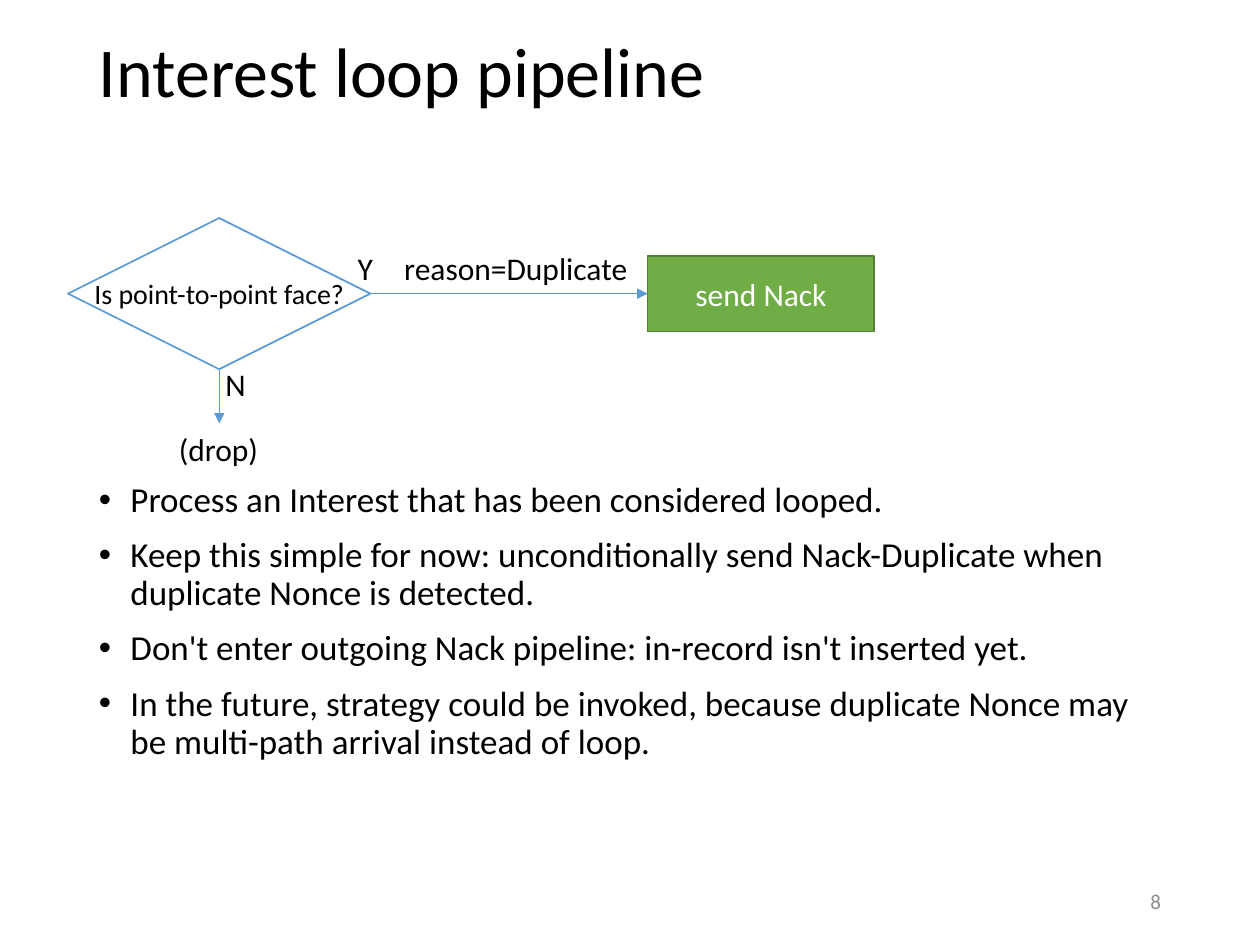
"""Build the Interest loop pipeline slide with its flowchart and notes on behaviour."""
from dataclasses import dataclass
from typing import Optional

import pptx
import pptx.dml.color
import pptx.enum.shapes
import pptx.enum.text
import pptx.oxml.ns
import pptx.util

Pt = pptx.util.Pt
RGBColor = pptx.dml.color.RGBColor
MSO_SHAPE = pptx.enum.shapes.MSO_SHAPE
ANCHOR = pptx.enum.text.MSO_ANCHOR
ALIGN = pptx.enum.text.PP_ALIGN
AUTO_SIZE = pptx.enum.text.MSO_AUTO_SIZE
qn = pptx.oxml.ns.qn

BLACK = RGBColor(0x00, 0x00, 0x00)
WHITE = RGBColor(0xFF, 0xFF, 0xFF)
GRAY = RGBColor(0x8C, 0x8C, 0x8C)
BLUE = RGBColor(0x5B, 0x9B, 0xD5)
GREEN = RGBColor(0x70, 0xAD, 0x47)
DARK_GREEN = RGBColor(0x53, 0x80, 0x35)

TOP, LEFT, BOTTOM, RIGHT = range(4)
LABEL_HEIGHT = 29.1


@dataclass
class Text:
    lines: list[str]
    left: float
    top: float
    width: float
    height: float = LABEL_HEIGHT
    size: float = 18
    color: RGBColor = BLACK
    align: ALIGN = ALIGN.LEFT
    anchor: ANCHOR = ANCHOR.TOP
    wrap: bool = False
    spacing: Optional[float] = None
    bullet: bool = False


@dataclass
class Node:
    kind: MSO_SHAPE
    text: Text
    fill: RGBColor
    line: RGBColor


def set_all(obj, values: dict) -> None:
    for name, value in values.items():
        setattr(obj, name, value)


def add_bullet(p) -> None:
    p.space_before = Pt(10)
    pPr = p._p.get_or_add_pPr()
    pPr.set("marL", str(Pt(18)))
    pPr.set("indent", str(-Pt(18)))
    for tag, name, value in (("a:buFont", "typeface", "Arial"), ("a:buChar", "char", "•")):
        pPr.makeelement(qn(tag), {})
        bu = pptx.oxml.xmlchemy.OxmlElement(tag)
        bu.set(name, value)
        pPr.append(bu)


def fill_text(sp, text: Text) -> None:
    tf = sp.text_frame
    set_all(tf, {"word_wrap": text.wrap, "vertical_anchor": text.anchor})
    for i, line in enumerate(text.lines):
        p = tf.paragraphs[0] if i == 0 else tf.add_paragraph()
        set_all(p, {"alignment": text.align, "line_spacing": text.spacing})
        if text.bullet:
            add_bullet(p)
        r = p.add_run()
        r.text = line
        set_all(r.font, {"name": "Calibri", "size": Pt(text.size)})
        r.font.color.rgb = text.color


def box(text: Text) -> list:
    return [Pt(v) for v in (text.left, text.top, text.width, text.height)]


def add_text(s, text: Text):
    sp = s.shapes.add_textbox(*box(text))
    fill_text(sp, text)
    if not text.wrap:
        sp.text_frame.auto_size = AUTO_SIZE.SHAPE_TO_FIT_TEXT
    return sp


def add_node(s, node: Node):
    sp = s.shapes.add_shape(node.kind, *box(node.text))
    sp.shadow.inherit = False
    sp.fill.solid()
    sp.fill.fore_color.rgb = node.fill
    sp.line.color.rgb = node.line
    sp.line.width = Pt(1)
    fill_text(sp, node.text)
    return sp


def add_arrow(s, start, start_side: int, end, end_side: int) -> None:
    cxn = s.shapes.add_connector(pptx.enum.shapes.MSO_CONNECTOR.STRAIGHT, 0, 0, 0, 0)
    cxn.begin_connect(start, start_side)
    cxn.end_connect(end, end_side)
    cxn.line.color.rgb = BLUE
    cxn.line.width = Pt(0.5)
    tail = pptx.oxml.xmlchemy.OxmlElement("a:tailEnd")
    tail.set("type", "triangle")
    cxn.line._get_or_add_ln().append(tail)
    cxn._element.spPr.append(pptx.oxml.xmlchemy.OxmlElement("a:effectLst"))


TITLE = Text(["Interest loop pipeline"], 49.5, 1.5, 621, 82, size=40,
             anchor=ANCHOR.MIDDLE, wrap=True, spacing=0.9)
BODY = Text([
    "Process an Interest that has been considered looped.",
    "Keep this simple for now: unconditionally send Nack-Duplicate when duplicate Nonce is detected.",
    "Don't enter outgoing Nack pipeline: in-record isn't inserted yet.",
    "In the future, strategy could be invoked, because duplicate Nonce may be multi-path arrival "
    "instead of loop.",
], 49.5, 272, 621, 214.5, size=20, wrap=True, spacing=0.9, bullet=True)
NUMBER = Text(["8"], 508.5, 500.5, 162, 28.75, size=12, color=GRAY,
              align=ALIGN.RIGHT, anchor=ANCHOR.MIDDLE, wrap=True)
LABELS = [
    Text(["reason=Duplicate"], 223.9, 139, 143.3),
    Text(["Y"], 197.3, 138.5, 23.8),
    Text(["N"], 121.7, 205.2, 25.9),
]
DROP = Text(["(drop)"], 95.1, 242, 60.4)
DECISION = Node(
    MSO_SHAPE.FLOWCHART_DECISION,
    Text(["Is point-to-point face?"], 38.9, 124.6, 172.8, 86.4, size=16,
         align=ALIGN.CENTER, anchor=ANCHOR.MIDDLE),
    WHITE, BLUE)
SEND_NACK = Node(
    MSO_SHAPE.RECTANGLE,
    Text(["send Nack"], 370.1, 146.2, 129.6, 43.2, color=WHITE,
         align=ALIGN.CENTER, anchor=ANCHOR.MIDDLE, wrap=True),
    GREEN, DARK_GREEN)


def main() -> None:
    prs = pptx.Presentation()
    set_all(prs, {"slide_width": Pt(720), "slide_height": Pt(540)})
    s = prs.slides.add_slide(prs.slide_layouts[6])
    for text in (TITLE, BODY, NUMBER):
        add_text(s, text)
    nack = add_node(s, SEND_NACK)
    decision = add_node(s, DECISION)
    drop = add_text(s, DROP)
    add_arrow(s, decision, RIGHT, nack, LEFT)
    add_arrow(s, decision, BOTTOM, drop, TOP)
    for label in LABELS:
        add_text(s, label)
    prs.save("out.pptx")


if __name__ == "__main__":
    main()
